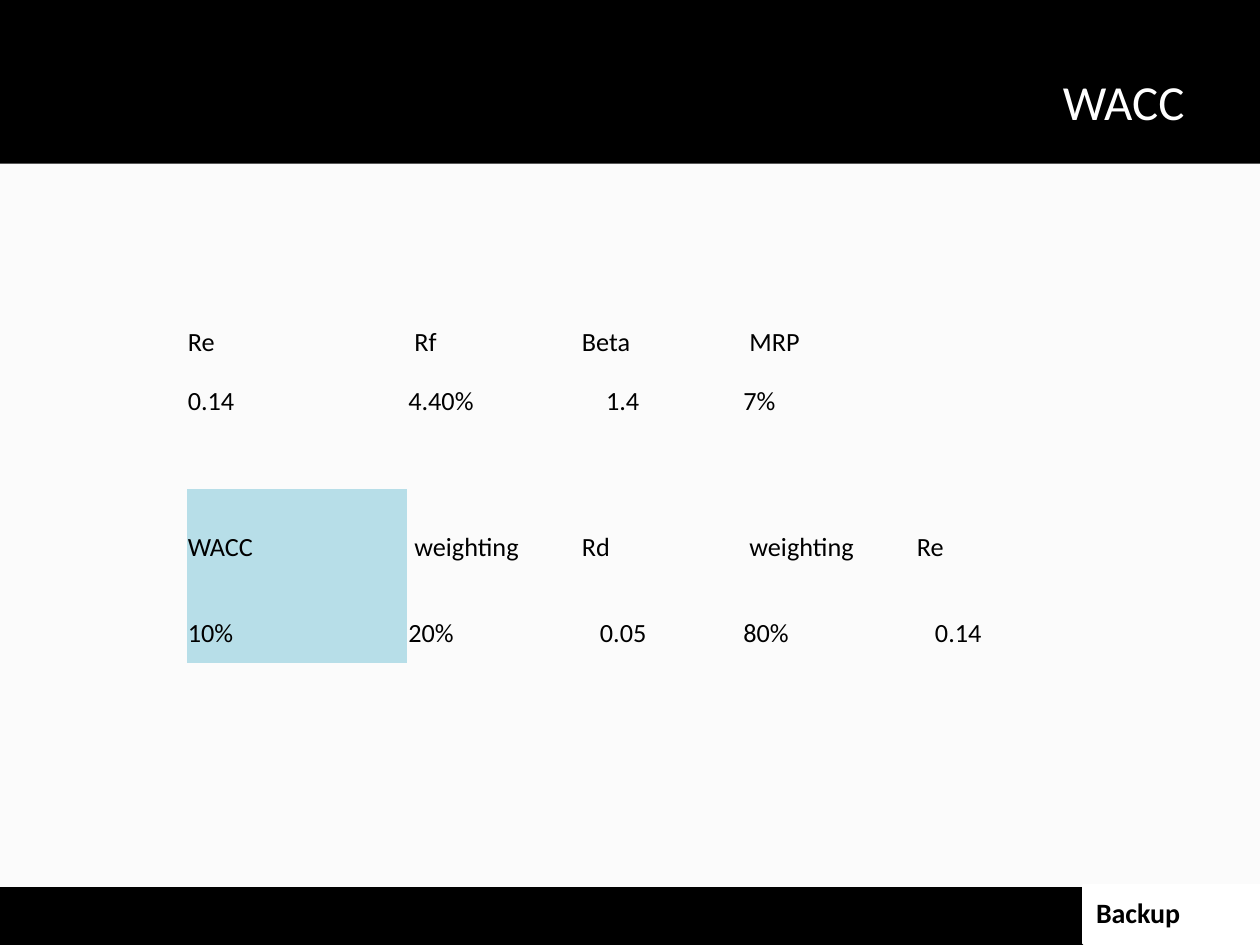
from pptx import Presentation
from pptx.dml.color import RGBColor
from pptx.enum.shapes import MSO_SHAPE
from pptx.enum.text import MSO_ANCHOR, MSO_AUTO_SIZE, PP_ALIGN
from pptx.oxml.ns import qn
from pptx.util import Pt

COLORS = {
    "background": "FBFBFB",
    "black": "000000",
    "white": "FFFFFF",
    "highlight": "B7DEE8",
}
FONT = "Calibri"
SLIDE_WIDTH, SLIDE_HEIGHT = 720, 540
NO_GRID_STYLE = "{2D5ABB26-0587-4C30-8999-92F81FD0307C}"

# Each cell is (text, left indent in points)
LABEL, NUMBER = 4.2, 14.5
ROWS = [
    [("Re", 0.72), ("Rf", LABEL), ("Beta", LABEL), ("MRP", LABEL)],
    [("0.14", 0.72), ("4.40%", 0.72), ("1.4", 18), ("7%", 0.72)],
    [],
    [("WACC", 0.72), ("weighting", LABEL), ("Rd", LABEL),
     ("weighting", LABEL), ("Re", LABEL)],
    [("10%", 0.72), ("20%", 0.72), ("0.05", NUMBER), ("80%", 0.72),
     ("0.14", NUMBER)],
]
ROW_HEIGHTS = [33.7, 33.7, 33.7, 65.4, 33.7]
HIGHLIGHTED_CELLS = {(3, 0), (4, 0)}


def color(name):
    return RGBColor.from_string(COLORS[name])


def style_text(paragraph, size, color_name, bold=False):
    font = paragraph.font
    font.name, font.size, font.bold = FONT, Pt(size), bold
    font.color.rgb = color(color_name)


def add_band(slide, left, top, width, height, color_name, outlined=False):
    band = slide.shapes.add_shape(
        MSO_SHAPE.RECTANGLE, Pt(left), Pt(top), Pt(width), Pt(height))
    band.shadow.inherit = False
    band.fill.solid()
    band.fill.fore_color.rgb = color(color_name)
    if outlined:
        band.line.color.rgb = color(color_name)
        band.line.width = Pt(2)
    else:
        band.line.fill.background()
    return band


def add_header(slide, left, top, width, height):
    band = add_band(slide, left, top, width, height, "black")
    title = slide.shapes.title
    title.element.addprevious(band.element)  # keep the title above its band
    title.left, title.top = Pt(left + 36), Pt(top + 21.6)
    title.width, title.height = Pt(width - 72), Pt(72)
    title.text_frame.text = "WACC"
    title.text_frame.vertical_anchor = MSO_ANCHOR.MIDDLE
    paragraph = title.text_frame.paragraphs[0]
    paragraph.alignment = PP_ALIGN.RIGHT
    style_text(paragraph, 28, "white")


def add_footer(slide, left, top, width, height):
    add_band(slide, left, top, width, height, "black")
    tag_left = left + 619.2
    add_band(slide, tag_left, top - 0.7, 110, height, "white", outlined=True)
    label = slide.shapes.add_textbox(
        Pt(tag_left), Pt(top + 1.4), Pt(63.4), Pt(26.6))
    frame = label.text_frame
    frame.word_wrap = False
    frame.auto_size = MSO_AUTO_SIZE.SHAPE_TO_FIT_TEXT
    frame.text = "Backup"
    style_text(frame.paragraphs[0], 16, "black", bold=True)


def add_wacc_table(slide, left, top, width, height):
    column_count = 5
    table = slide.shapes.add_table(
        len(ROWS), column_count, Pt(left), Pt(top), Pt(width), Pt(height)).table
    table.first_row = table.horz_banding = False
    table._tbl.tblPr.find(qn("a:tableStyleId")).text = NO_GRID_STYLE

    first_width = 126
    other_width = (width - first_width) / (column_count - 1)
    for index, column in enumerate(table.columns):
        column.width = Pt(other_width if index else first_width)
    for row, row_height in zip(table.rows, ROW_HEIGHTS):
        row.height = Pt(row_height)

    for row_index, row in enumerate(ROWS):
        for column_index in range(column_count):
            cell = table.cell(row_index, column_index)
            if (row_index, column_index) in HIGHLIGHTED_CELLS:
                cell.fill.solid()
                cell.fill.fore_color.rgb = color("highlight")
            else:
                cell.fill.background()
            if column_index < len(row):
                text, indent = row[column_index]
                cell.text = text
                cell.vertical_anchor = MSO_ANCHOR.MIDDLE
                cell.margin_left = Pt(indent)
                cell.margin_right = cell.margin_top = Pt(0.72)
                cell.margin_bottom = Pt(0)
                style_text(cell.text_frame.paragraphs[0], 15, "black")


def main():
    presentation = Presentation()
    presentation.slide_width = Pt(SLIDE_WIDTH)
    presentation.slide_height = Pt(SLIDE_HEIGHT)
    slide = presentation.slides.add_slide(presentation.slide_layouts[5])
    slide.background.fill.solid()
    slide.background.fill.fore_color.rgb = color("background")

    add_header(slide, 0, 0, SLIDE_WIDTH, 93.6)
    add_footer(slide, 0, 506.9, SLIDE_WIDTH, 33.1)
    add_wacc_table(slide, 106.6, 178.6, 509, sum(ROW_HEIGHTS))
    presentation.save("out.pptx")


if __name__ == "__main__":
    main()
